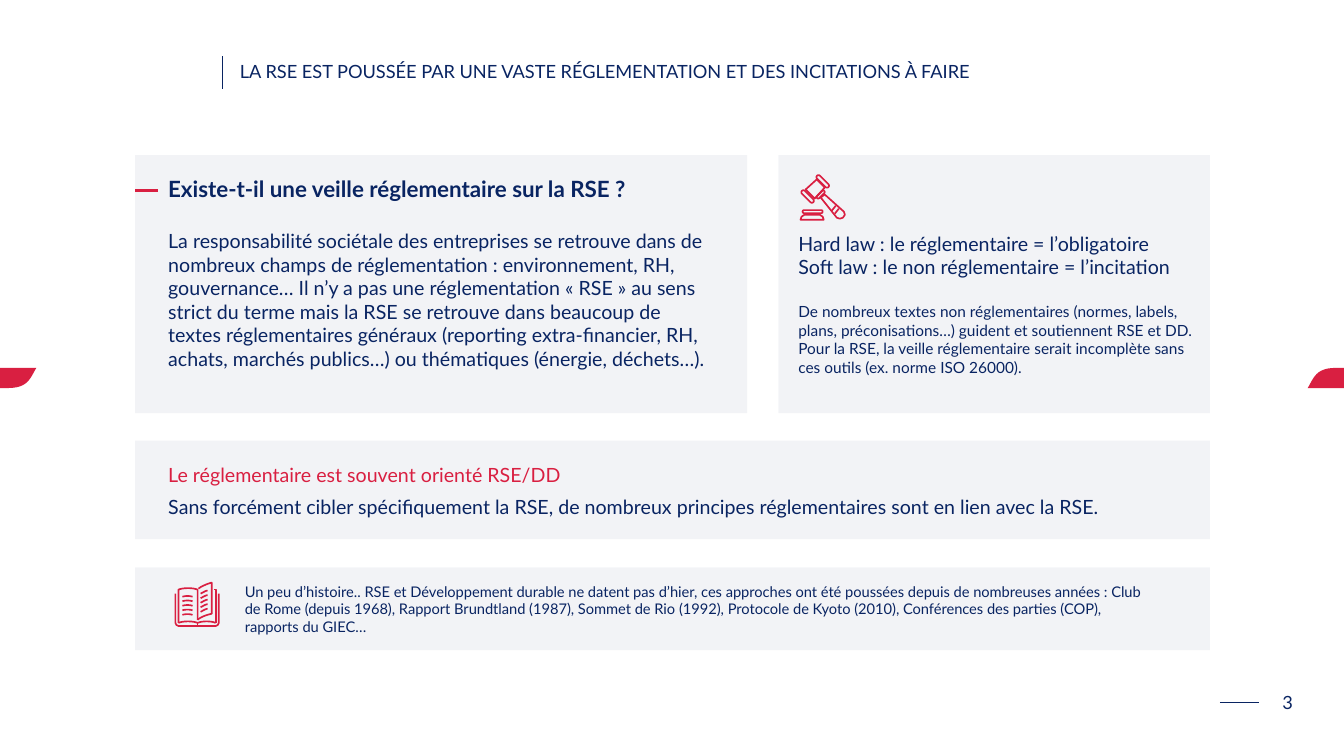
from dataclasses import dataclass

from lxml import etree
from pptx import Presentation
from pptx import util as u
from pptx.dml import color
from pptx.enum import shapes, text
from pptx.oxml import ns

NAVY, RED = "092462", "D91F41"
FONT = "Lato"
ICON_STROKE = 1.2
Point = tuple[float, float]


@dataclass
class Para:
    words: str
    size: float
    ink: str = NAVY
    bold: bool = False
    before: float = 0


@dataclass
class TextBlock:
    left: float
    top: float
    width: float
    height: float
    paras: list[Para]
    inset: float = 0.1
    middle: bool = False
    wrap: bool = True
    centred: bool = False


@dataclass
class Rule:
    start: Point
    end: Point
    ink: str
    weight: float


@dataclass
class Bar:
    """A rounded outline bar, placed by its centre and turned."""
    centre: Point
    length: float
    thickness: float
    angle: float = 0


def rgb(value: str) -> color.RGBColor:
    return color.RGBColor.from_string(value)


def add_panel(page, left: float, top: float, width: float, height: float) -> None:
    panel = page.shapes.add_shape(shapes.MSO_SHAPE.RECTANGLE, *map(u.Inches, (left, top, width, height)))
    panel.shadow.inherit = False
    panel.line.fill.background()
    panel.fill.solid()
    panel.fill.fore_color.rgb = rgb(NAVY)
    tint = panel._element.spPr.find(".//" + ns.qn("a:srgbClr"))
    etree.SubElement(tint, ns.qn("a:alpha")).set("val", "5000")


def add_text(page, block: TextBlock) -> None:
    box = page.shapes.add_textbox(*map(u.Inches, (block.left, block.top, block.width, block.height)))
    frame = box.text_frame
    frame.word_wrap = block.wrap
    frame.auto_size = text.MSO_AUTO_SIZE.NONE
    frame.margin_left = u.Inches(block.inset)
    if block.middle:
        frame.vertical_anchor = text.MSO_ANCHOR.MIDDLE
    for index, item in enumerate(block.paras):
        para = frame.add_paragraph() if index else frame.paragraphs[0]
        para.alignment = text.PP_ALIGN.CENTER if block.centred else text.PP_ALIGN.LEFT
        if item.before:
            para.space_before = u.Pt(item.before)
        span = para.add_run()
        span.text = item.words
        span.font.name = FONT
        span.font.size = u.Pt(item.size)
        span.font.bold = item.bold
        span.font.color.rgb = rgb(item.ink)


def add_rule(page, rule: Rule) -> None:
    line = page.shapes.add_connector(
        shapes.MSO_CONNECTOR.STRAIGHT, *map(u.Inches, rule.start + rule.end))
    line.line.color.rgb = rgb(rule.ink)
    line.line.width = u.Pt(rule.weight)
    etree.SubElement(line._element.spPr, ns.qn("a:effectLst"))


def outline(shape) -> None:
    shape.shadow.inherit = False
    shape.fill.background()
    shape.line.color.rgb = rgb(RED)
    shape.line.width = u.Pt(ICON_STROKE)


def add_path(page, points: list[Point], closed: bool = False, filled: bool = False) -> None:
    spots = [(u.Inches(x), u.Inches(y)) for x, y in points]
    builder = page.shapes.build_freeform(*spots[0], scale=1.0)
    builder.add_line_segments(spots[1:], close=closed)
    shape = builder.convert_to_shape()
    outline(shape)
    if filled:
        shape.fill.solid()
        shape.fill.fore_color.rgb = rgb(RED)
        shape.line.fill.background()


def add_bar(page, bar: Bar) -> None:
    x, y = bar.centre
    shape = page.shapes.add_shape(
        shapes.MSO_SHAPE.ROUNDED_RECTANGLE, u.Inches(x - bar.length / 2),
        u.Inches(y - bar.thickness / 2), u.Inches(bar.length), u.Inches(bar.thickness))
    shape.adjustments[0] = 0.5
    shape.rotation = bar.angle
    outline(shape)


def curve(a: Point, b: Point, c: Point, d: Point, steps: int = 12) -> list[Point]:
    """Points along a cubic Bezier curve."""
    return [tuple((1 - t) ** 3 * p + 3 * t * (1 - t) ** 2 * q + 3 * t * t * (1 - t) * r + t ** 3 * s
                  for p, q, r, s in zip(a, b, c, d))
            for t in (i / steps for i in range(steps + 1))]


def add_edge_tab(page, centre: float) -> None:
    """A leaf with two opposite curved corners, straddling a slide edge."""
    half = curve((0.08, 0.1), (0.28, 0.1), (0.3, 0), (0.36, -0.1))
    leaf = half + [(-x, -y) for x, y in half]
    add_path(page, [(centre + x, 3.75 + y) for x, y in leaf], closed=True, filled=True)


def add_gavel(page) -> None:
    for bar in (Bar((8.06, 2.1), 0.2, 0.03), Bar((8.16, 1.8), 0.16, 0.04, 45),
                Bar((8.01, 1.95), 0.16, 0.04, 45), Bar((8.14, 1.93), 0.1, 0.03, -45)):
        add_bar(page, bar)
    base = [(7.94, 2.18), (7.95, 2.15), (7.98, 2.13), (8.13, 2.13), (8.16, 2.15), (8.17, 2.18)]
    head = [(7.99, 1.88), (8.1, 1.78), (8.18, 1.86), (8.08, 1.97)]
    handle = [(8.14, 1.96), (8.18, 1.93), (8.37, 2.1), (8.38, 2.13), (8.36, 2.16),
              (8.33, 2.17), (8.3, 2.16)]
    for part in (base, head, handle):
        add_path(page, part, closed=True)
    for shift in (0, 0.03):
        add_path(page, [(8.25 + shift, 2.09 + shift), (8.29 + shift, 2.04 + shift)])


def add_book(page) -> None:
    cover = [(1.74, 5.89), (1.74, 6.18), (1.75, 6.2), (1.77, 6.21), (2.14, 6.21),
             (2.16, 6.2), (2.17, 6.18), (2.17, 5.89)]
    left_page = ([(1.77, 6.18), (1.77, 5.85)]
                 + curve((1.77, 5.85), (1.82, 5.83), (1.91, 5.83), (1.96, 5.85))
                 + [(1.96, 6.15)])
    lifted_page = (curve((1.97, 5.84), (1.98, 5.83), (2.03, 5.8), (2.1, 5.78))
                   + curve((2.1, 6.09), (2.04, 6.1), (1.98, 6.13), (1.96, 6.15)))
    right_page = [(2.12, 5.85), (2.14, 5.85), (2.14, 6.18)]
    feet = (curve((1.77, 6.18), (1.82, 6.16), (1.91, 6.16), (1.96, 6.18))
            + curve((1.96, 6.18), (2.01, 6.16), (2.09, 6.16), (2.14, 6.18)))
    for part in (cover, left_page, lifted_page, right_page, feet, [(1.96, 6.17), (1.96, 6.21)]):
        add_path(page, part)
    for row in range(5):
        y = 5.92 + 0.045 * row
        add_path(page, curve((1.81, y), (1.84, y - 0.01), (1.88, y - 0.01), (1.91, y)))
        y = 5.89 + 0.045 * row
        add_path(page, curve((1.99, y), (2.01, y - 0.01), (2.04, y - 0.03), (2.06, y - 0.03)))


PANELS = [(1.34, 1.54, 6.07, 2.56), (7.72, 1.54, 4.28, 2.56),
          (1.34, 4.37, 10.66, 0.98), (1.34, 5.63, 10.66, 0.82)]
RULES = [Rule((12.1, 6.97), (12.49, 6.97), NAVY, 0.35), Rule((2.2, 0.56), (2.2, 0.88), NAVY, 0.35),
         Rule((1.34, 1.89), (1.57, 1.89), RED, 2.25)]
TEXTS = [
    TextBlock(12.52, 6.81, 0.5, 0.32, [Para("3", 13)], middle=True, wrap=False, centred=True),
    TextBlock(2.18, 0.52, 10.32, 0.38, [
        Para("LA RSE EST POUSSÉE PAR UNE VASTE RÉGLEMENTATION ET DES INCITATIONS À FAIRE", 13),
    ], inset=0.2, middle=True),
    TextBlock(1.57, 1.69, 5.56, 2.29, [
        Para("Existe-t-il une veille réglementaire sur la RSE ?", 16, bold=True),
        Para("La responsabilité sociétale des entreprises se retrouve dans de nombreux champs de "
             "réglementation : environnement, RH, gouvernance… Il n’y a pas une réglementation "
             "« RSE » au sens strict du terme mais la RSE se retrouve dans beaucoup de textes "
             "réglementaires généraux (reporting extra-financier, RH, achats, marchés publics…) "
             "ou thématiques (énergie, déchets…).", 14, before=19.2)]),
    TextBlock(7.82, 2.25, 4.17, 1.73, [
        Para("Hard law : le réglementaire = l’obligatoire", 14),
        Para("Soft law : le non réglementaire = l’incitation", 14),
        Para("De nombreux textes non réglementaires (normes, labels, plans, préconisations…) "
             "guident et soutiennent RSE et DD.", 11, before=16.8),
        Para("Pour la RSE, la veille réglementaire serait incomplète sans ces outils "
             "(ex. norme ISO 26000).", 11)]),
    TextBlock(1.57, 4.54, 10.31, 0.66, [
        Para("Le réglementaire est souvent orienté RSE/DD", 14, RED),
        Para("Sans forcément cibler spécifiquement la RSE, de nombreux principes réglementaires "
             "sont en lien avec la RSE.", 14, before=6)]),
    TextBlock(2.33, 5.73, 9.1, 0.63, [
        Para("Un peu d’histoire.. RSE et Développement durable ne datent pas d’hier, ces approches "
             "ont été poussées depuis de nombreuses années : Club de Rome (depuis 1968), Rapport "
             "Brundtland (1987), Sommet de Rio (1992), Protocole de Kyoto (2010), Conférences des "
             "parties (COP), rapports du GIEC…", 10.5)]),
]


def main() -> None:
    deck = Presentation()
    deck.slide_width, deck.slide_height = u.Inches(13.33), u.Inches(7.5)
    page = deck.slides.add_slide(deck.slide_layouts[6])
    for centre in (0, 13.33):
        add_edge_tab(page, centre)
    for panel in PANELS:
        add_panel(page, *panel)
    for rule in RULES:
        add_rule(page, rule)
    for block in TEXTS:
        add_text(page, block)
    add_gavel(page)
    add_book(page)
    deck.save("out.pptx")


if __name__ == "__main__":
    main()
